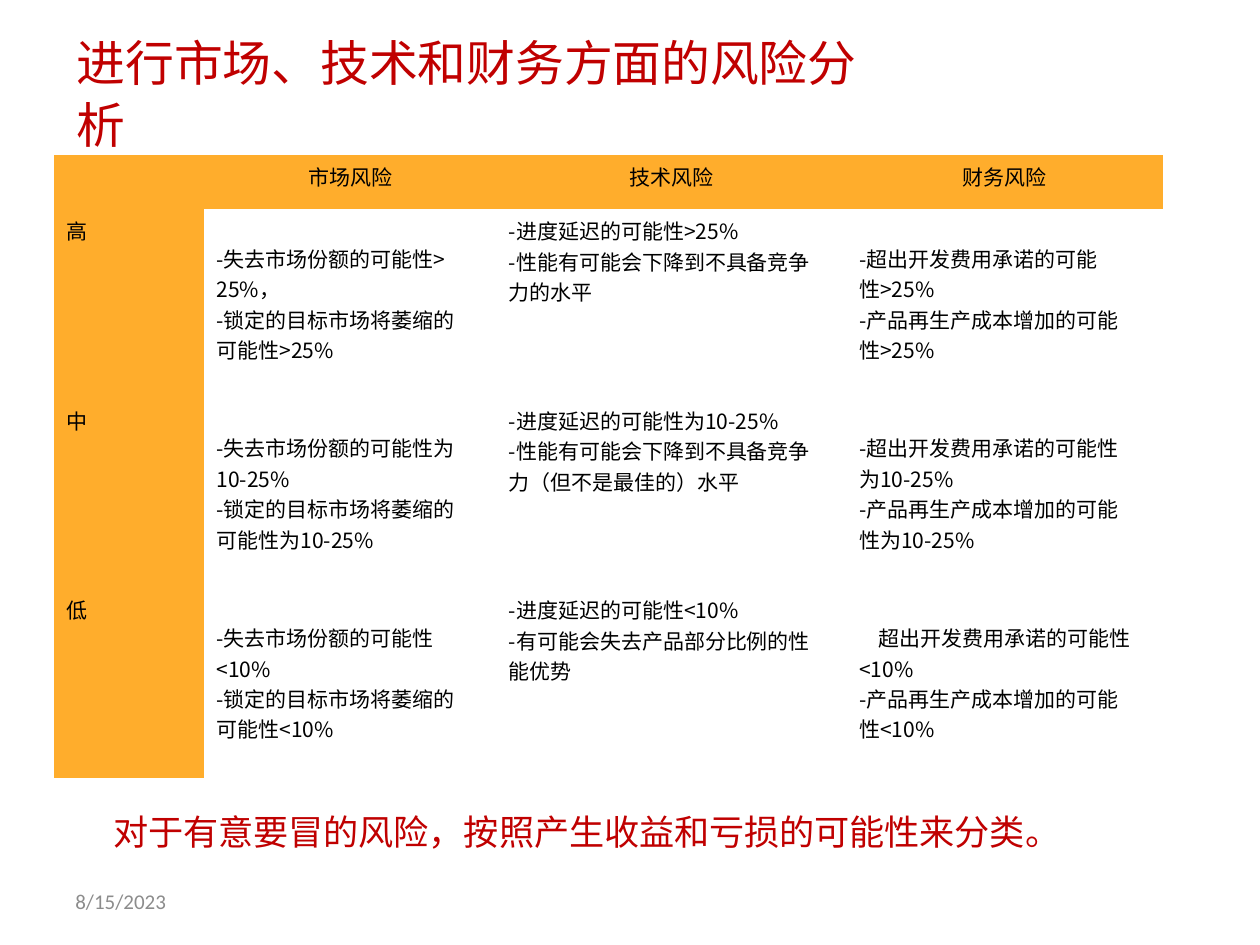
from pptx import Presentation
from pptx.dml.color import RGBColor
from pptx.enum.text import MSO_ANCHOR, MSO_AUTO_SIZE, PP_ALIGN
from pptx.oxml.ns import qn
from pptx.util import Inches, Pt

TOP, MIDDLE = MSO_ANCHOR.TOP, MSO_ANCHOR.MIDDLE
LEFT, CENTER = PP_ALIGN.LEFT, PP_ALIGN.CENTER
CJK = "Noto Sans CJK SC"
RED, ORANGE, WHITE, BLACK, GRAY = "C00000", "FFAD2C", "FFFFFF", "000000", "8C8C8C"
NO_GRID = "{2D5ABB26-0587-4C30-8999-92F81FD0307C}"


def rgb(value):
    return RGBColor.from_string(value)


def write(tf, lines, size, color, font=CJK, align=LEFT, spacing=None):
    for i, line in enumerate(lines):
        p = tf.paragraphs[0] if i == 0 else tf.add_paragraph()
        p.alignment = align
        if spacing:
            p.line_spacing = Pt(spacing)
        r = p.add_run()
        r.text = line
        r.font.size = Pt(size)
        r.font.name = font
        r.font.color.rgb = rgb(color)
        ea = r.font._element.makeelement(qn("a:ea"), {"typeface": font})
        r.font._element.find(qn("a:latin")).addnext(ea)


prs = Presentation()
prs.slide_width, prs.slide_height = Inches(10), Inches(7.5)
s = prs.slides.add_slide(prs.slide_layouts[5])

# Title and closing remark
title = s.shapes.title
title.left, title.top = Inches(0.61), Inches(0.24)
title.width, title.height = Inches(6.55), Inches(0.49)
remark = s.shapes.add_textbox(Inches(0.9), Inches(6.42), Inches(7.5), Inches(0.35))
for sp, text, size, spacing in [
    (title, "进行市场、技术和财务方面的风险分析", 27.9, 35),
    (remark, "对于有意要冒的风险，按照产生收益和亏损的可能性来分类。", 20.1, 25),
]:
    tf = sp.text_frame
    tf.margin_left = tf.margin_top = tf.margin_right = 0
    tf.margin_bottom = Inches(0.05)
    tf.vertical_anchor = TOP
    tf.auto_size = MSO_AUTO_SIZE.NONE
    tf.word_wrap = sp is title
    write(tf, [text], size, RED, spacing=spacing)

# Risk table: one list of lines per cell
rows = [
    [[], ["市场风险"], ["技术风险"], ["财务风险"]],
    [["高"],
     ["-失去市场份额的可能性>", "25%，", "-锁定的目标市场将萎缩的", "可能性>25%"],
     ["-进度延迟的可能性>25%", "-性能有可能会下降到不具备竞争", "力的水平"],
     ["-超出开发费用承诺的可能", "性>25%", "-产品再生产成本增加的可能", "性>25%"]],
    [["中"],
     ["-失去市场份额的可能性为", "10-25%", "-锁定的目标市场将萎缩的", "可能性为10-25%"],
     ["-进度延迟的可能性为10-25%", "-性能有可能会下降到不具备竞争", "力（但不是最佳的）水平"],
     ["-超出开发费用承诺的可能性", "为10-25%", "-产品再生产成本增加的可能", "性为10-25%"]],
    [["低"],
     ["-失去市场份额的可能性", "<10%", "-锁定的目标市场将萎缩的", "可能性<10%"],
     ["-进度延迟的可能性<10%", "-有可能会失去产品部分比例的性", "能优势"],
     ["超出开发费用承诺的可能性", "<10%", "-产品再生产成本增加的可能", "性<10%"]],
]
col_widths = [1.19, 2.32, 2.78, 2.51]
row_heights = [0.43] + [1.505] * 3
table = s.shapes.add_table(
    len(rows), len(col_widths), Inches(0.43), Inches(1.23),
    Inches(sum(col_widths)), Inches(sum(row_heights))).table
table.first_row = table.horz_banding = False
table._tbl.tblPr.find(qn("a:tableStyleId")).text = NO_GRID
for col, width in zip(table.columns, col_widths):
    col.width = Inches(width)
for row, height in zip(table.rows, row_heights):
    row.height = Inches(height)

for i, row in enumerate(rows):
    for j, lines in enumerate(row):
        cell = table.cell(i, j)
        cell.fill.solid()
        cell.fill.fore_color.rgb = rgb(ORANGE if i == 0 or j == 0 else WHITE)
        cell.vertical_anchor = MIDDLE if i and j in (1, 3) else TOP
        write(cell.text_frame, lines, 12, BLACK, align=LEFT if i else CENTER)
# The only centred line in the body
table.cell(3, 3).text_frame.paragraphs[0].alignment = CENTER

# Date
date = s.shapes.add_textbox(Inches(0.5), Inches(6.95), Inches(2.33), Inches(0.4))
date.text_frame.word_wrap = True
date.text_frame.vertical_anchor = MIDDLE
write(date.text_frame, ["8/15/2023"], 12, GRAY, font="Calibri")

prs.save("out.pptx")
